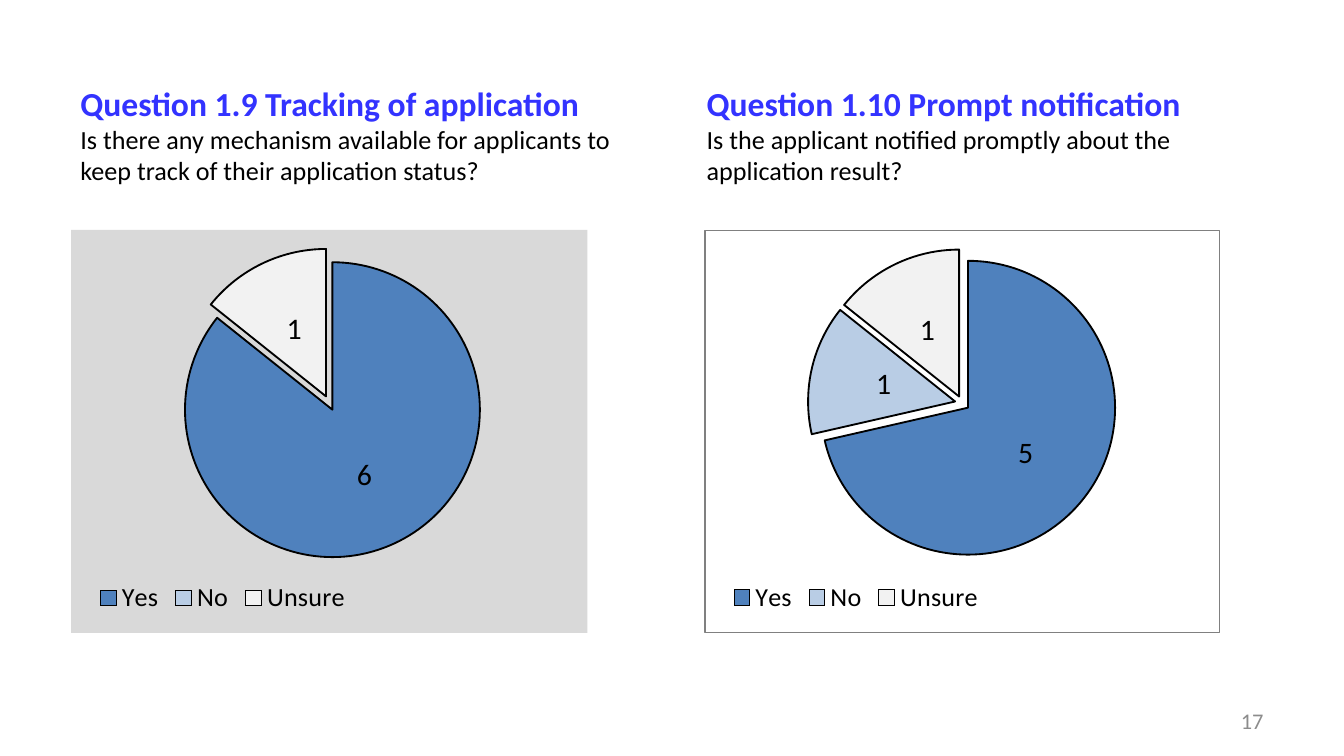
"""Build a slide with two survey questions, each answered by an exploded pie chart."""
import pptx
import pptx.chart.data
import pptx.dml.color
import pptx.enum.chart
import pptx.enum.text
import pptx.oxml
import pptx.oxml.ns
import pptx.util

Pt = pptx.util.Pt
RGBColor = pptx.dml.color.RGBColor

ANSWERS = ["Yes", "No", "Unsure"]
QUESTIONS = [
    {
        "title": "Question 1.9 Tracking of application",
        "question": "Is there any mechanism available for applicants to keep track of their application status?",
        "text_box": (36, 20.88, 324, 102.24),
        "chart_left": 38.16,
        "votes": (6, 0, 1),
        "fill": "D9D9D9",
        "border": None,
    },
    {
        "title": "Question 1.10 Prompt notification",
        "question": "Is the applicant notified promptly about the application result?",
        "text_box": (371.52, 38.16, 324, 67.68),
        "chart_left": 377.28,
        "votes": (5, 1, 1),
        "fill": None,
        "border": "808080",
    },
]
PAGE_NUMBER = "17"
PAGE_NUMBER_BOX = (516.24, 375.12, 167.76, 21.6)
CHART_TOP, CHART_WIDTH, CHART_HEIGHT = 123.12, 276.48, 216
PIE_LAYOUT = {"x": 0.2, "y": 0.04, "w": 0.6, "h": 0.78}
LEGEND_LAYOUT = {"x": 0.04, "y": 0.86}

THEME = {
    "font": "Calibri",
    "title": (18, "3333FF"),
    "body": (14, "000000"),
    "label": (16, "000000"),
    "chart": (10, "000000"),
    "page": (12, "8C8C8C"),
    "slices": ("4F81BD", "B9CDE5", "F2F2F2"),
    "outline": "000000",
}


def style_font(font, role, bold=False):
    size, color = THEME[role]
    font.name = THEME["font"]
    font.size = Pt(size)
    font.bold = bold
    font.color.rgb = RGBColor.from_string(color)


def chart_xml(markup):
    tag, rest = markup[1:].split(">", 1)
    namespaces = pptx.oxml.ns.nsdecls("c", "a")
    return pptx.oxml.parse_xml(f"<{tag} {namespaces}>{rest}")


def add_text(slide, box, lines, alignment=None):
    shape = slide.shapes.add_textbox(*map(Pt, box))
    frame = shape.text_frame
    frame.word_wrap = True
    frame.vertical_anchor = pptx.enum.text.MSO_ANCHOR.MIDDLE
    frame.text = "\n".join(text for text, role in lines)
    for paragraph, (text, role) in zip(frame.paragraphs, lines):
        style_font(paragraph.font, role, bold=role == "title")
        paragraph.alignment = alignment


def manual_layout(sizes, inner=False):
    target = '<c:layoutTarget val="inner"/>' if inner else ""
    modes = "".join(f'<c:{key}Mode val="edge"/>' for key in "xy")
    values = "".join(f'<c:{key} val="{value}"/>' for key, value in sizes.items())
    return chart_xml(f"<c:layout><c:manualLayout>{target}{modes}{values}</c:manualLayout></c:layout>")


def set_layout(parent, layout, index):
    for old in parent.findall(pptx.oxml.ns.qn("c:layout")):
        parent.remove(old)
    parent.insert(index, layout)


def solid_or_none(color):
    if color is None:
        return "<a:noFill/>"
    return f'<a:solidFill><a:srgbClr val="{color}"/></a:solidFill>'


def add_pie(slide, question):
    data = pptx.chart.data.CategoryChartData()
    data.categories = ANSWERS
    data.add_series("Series 1", question["votes"])
    box = (question["chart_left"], CHART_TOP, CHART_WIDTH, CHART_HEIGHT)
    kind = pptx.enum.chart.XL_CHART_TYPE.PIE
    chart = slide.shapes.add_chart(kind, *map(Pt, box), data).chart
    chart.has_title = False
    style_font(chart.font, "chart")
    chart.has_legend = True
    chart.legend.position = pptx.enum.chart.XL_LEGEND_POSITION.BOTTOM
    chart.legend.include_in_layout = False
    style_font(chart.legend.font, "body")

    plot = chart.plots[0]
    plot.vary_by_categories = True
    series = plot.series[0]
    labels = series.data_labels
    labels.show_value = True
    labels.position = pptx.enum.chart.XL_LABEL_POSITION.CENTER
    style_font(labels.font, "label")
    for index, color in enumerate(THEME["slices"]):
        point = series.points[index].format
        point.fill.solid()
        point.fill.fore_color.rgb = RGBColor.from_string(color)
        point.line.color.rgb = RGBColor.from_string(THEME["outline"])
        point.line.width = Pt(1)
        if question["votes"][index] == 0:
            labels._element.insert(0, chart_xml(
                f'<c:dLbl><c:idx val="{index}"/><c:delete val="1"/></c:dLbl>'))
    first_point = series._element.find(pptx.oxml.ns.qn("c:dPt"))
    first_point.addprevious(pptx.oxml.parse_xml(
        f'<c:explosion {pptx.oxml.ns.nsdecls("c")} val="5"/>'))

    chart_space = chart._chartSpace
    set_layout(chart_space.chart.plotArea, manual_layout(PIE_LAYOUT, inner=True), 0)
    set_layout(chart.legend._element, manual_layout(LEGEND_LAYOUT), 1)
    fill, border = solid_or_none(question["fill"]), solid_or_none(question["border"])
    chart_space.chart.addnext(chart_xml(
        f'<c:spPr>{fill}<a:ln w="{Pt(0.75)}">{border}</a:ln></c:spPr>'))


def main():
    presentation = pptx.Presentation()
    presentation.slide_width, presentation.slide_height = Pt(720), Pt(405)
    slide = presentation.slides.add_slide(presentation.slide_layouts[6])
    for question in QUESTIONS:
        lines = [(question["title"], "title"), (question["question"], "body")]
        add_text(slide, question["text_box"], lines)
        add_pie(slide, question)
    add_text(slide, PAGE_NUMBER_BOX, [(PAGE_NUMBER, "page")], pptx.enum.text.PP_ALIGN.RIGHT)
    presentation.save("out.pptx")


if __name__ == "__main__":
    main()
